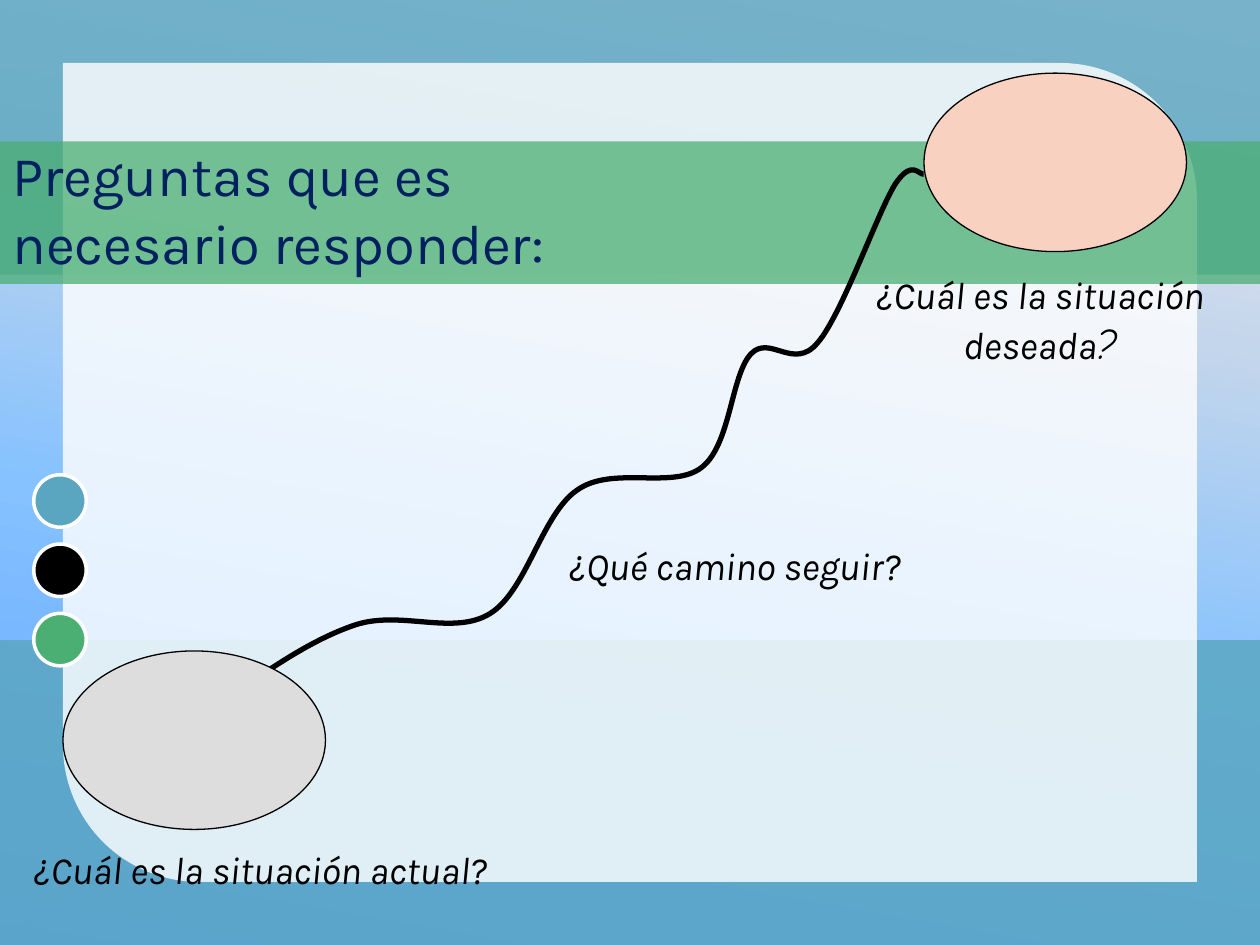
"""Slide: the questions to answer on the way from the current to the desired situation."""
import pptx
import pptx.dml.color
import pptx.enum.shapes
import pptx.enum.text
import pptx.oxml
import pptx.oxml.ns
import pptx.util
from lxml import etree

Pt = pptx.util.Pt
qn = pptx.oxml.ns.qn
KIND = pptx.enum.shapes.MSO_SHAPE
ALIGN = pptx.enum.text.PP_ALIGN
COLORS = {
    "teal": "5AA6C0", "green": "4BAF73", "white": "FFFFFF", "black": "000000",
    "navy": "002060", "peach": "F9D1C1", "gray": "DDDDDD",
}
SKY = [(0, "5E9EFF"), (40, "85C2FF"), (70, "C4D6EB"), (100, "FFEBFA")]

deck = pptx.Presentation()
deck.slide_width, deck.slide_height = Pt(720), Pt(540)
slide = deck.slides.add_slide(deck.slide_layouts[6])


def add_figure(kind, box, fill, alpha=100, line=None, weight=0):
    figure = slide.shapes.add_shape(kind, *map(Pt, box))
    figure.shadow.inherit = False
    figure.fill.solid()
    figure.fill.fore_color.rgb = pptx.dml.color.RGBColor.from_string(COLORS[fill])
    if alpha < 100:
        color = figure.fill._xPr.find(qn("a:solidFill"))[0]
        etree.SubElement(color, qn("a:alpha")).set("val", str(alpha * 1000))
    if line:
        figure.line.color.rgb = pptx.dml.color.RGBColor.from_string(COLORS[line])
        figure.line.width = Pt(weight)
    else:
        figure.line.fill.background()
    return figure


def add_text(box, runs, color="black", italic=True, align=ALIGN.LEFT, wrap=True):
    frame = slide.shapes.add_textbox(*map(Pt, box)).text_frame
    frame.word_wrap = wrap
    frame.auto_size = pptx.enum.text.MSO_AUTO_SIZE.SHAPE_TO_FIT_TEXT
    paragraph = frame.paragraphs[0]
    paragraph.alignment = align
    for words, size, font in runs:
        run = paragraph.add_run()
        run.text = words
        run.font.size, run.font.name, run.font.italic = Pt(size), font, italic
        run.font.color.rgb = pptx.dml.color.RGBColor.from_string(COLORS[color])


sky = slide.background.fill
sky.gradient()
sky.gradient_angle = 80
stops = slide.element.find(".//" + qn("a:gsLst"))
for stop in list(stops):
    stops.remove(stop)
for position, color in SKY:
    stop = etree.SubElement(stops, qn("a:gs"), pos=str(position * 1000))
    etree.SubElement(stop, qn("a:srgbClr"), val=color)

add_figure(KIND.RECTANGLE, (0, 0, 720, 157), "teal", 82)
add_figure(KIND.RECTANGLE, (0, 365.8, 720, 174.2), "teal", 82)
panel = add_figure(KIND.ROUND_2_DIAG_RECTANGLE, (36, 36, 648, 468), "white", 81)
panel.adjustments[0], panel.adjustments[1] = 0, 0.167
add_figure(KIND.RECTANGLE, (0, 80.8, 720, 81.5), "green", 75)
for row, color in enumerate(["teal", "black", "green"]):
    add_figure(KIND.OVAL, (19.3, 271.3 + 39.6 * row, 30, 30), color, line="white", weight=2)

add_figure(KIND.OVAL, (528, 41.8, 150, 102), "peach", line="black", weight=0.75)
add_text((12, 480, 301, 34), [("¿Cuál es la situación actual?", 22, "Karla")], wrap=False)

road_points = [
    (126, 401.8),
    (151.9, 383.8), (177.1, 365.8), (203, 357.1),
    (229, 348.5), (259.2, 363.6), (280.1, 350.6),
    (301, 337.7), (309.6, 293.8), (329.8, 280.1),
    (349.9, 265.7), (384.5, 280.1), (401, 267.1),
    (417.6, 254.2), (417.6, 214.6), (429.1, 202.3),
    (439.9, 190.8), (453.6, 212.4), (467.3, 195.8),
    (481, 180), (501.1, 122.4), (511.2, 105.8),
    (521.3, 90), (525.6, 100.8), (527.8, 99.4),
]
start, *rest = [(Pt(x), Pt(y)) for x, y in road_points]
builder = slide.shapes.build_freeform(*start)
builder.add_line_segments(rest, close=False)
road = builder.convert_to_shape()
road.shadow.inherit = False
road.fill.background()
road.line.color.rgb = pptx.dml.color.RGBColor.from_string(COLORS["black"])
road.line.width = Pt(3)
segments = list(road.element.iter(qn("a:lnTo")))
trace = segments[0].getparent()
for first in range(0, len(segments), 3):
    curve = etree.SubElement(trace, qn("a:cubicBezTo"))
    for segment in segments[first:first + 3]:
        curve.append(segment[0])
        trace.remove(segment)

add_text((318, 306, 258, 34), [("¿Qué camino seguir?", 22, "Karla")])
add_text((0, 77, 336, 85), [("Preguntas que es necesario responder:", 32, "Karla")],
         color="navy", italic=False)
add_figure(KIND.OVAL, (36, 372, 150, 102), "gray", line="black", weight=0.75)
add_text((468.7, 151.2, 251.3, 65.5),
         [("¿Cuál es la situación deseada", 22, "Karla"), ("?", 24, "Comic Neue")],
         align=ALIGN.CENTER)

deck.save("out.pptx")
